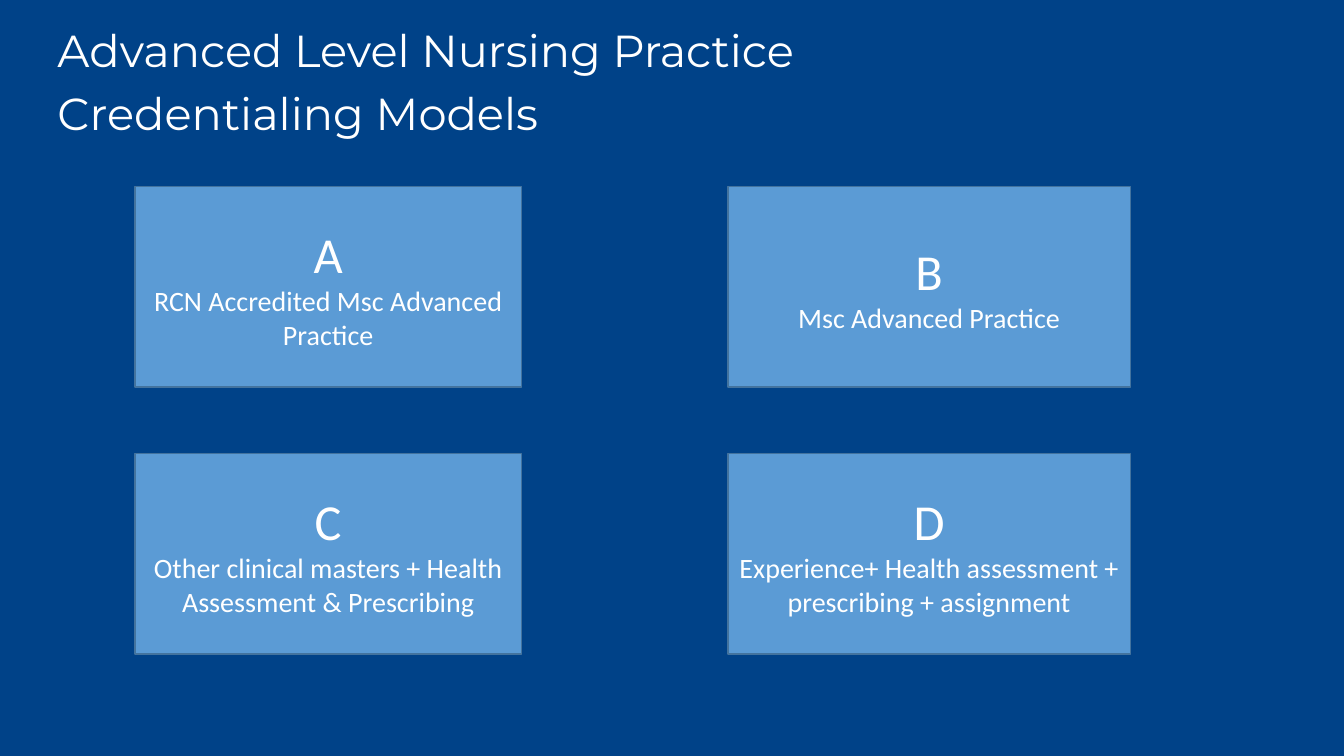
"""Build the slide on credentialing models for advanced level nursing practice."""
from dataclasses import dataclass

from pptx import Presentation
from pptx.dml.color import RGBColor
from pptx.enum.shapes import MSO_SHAPE as Shape
from pptx.enum.text import MSO_ANCHOR as Anchor, MSO_AUTO_SIZE as AutoSize, PP_ALIGN as Align
from pptx.slide import Slide
from pptx.text.text import TextFrame
from pptx.util import Inches, Pt


@dataclass(frozen=True)
class Theme:
    background: RGBColor = RGBColor(0x00, 0x42, 0x88)
    card_fill: RGBColor = RGBColor(0x5B, 0x9B, 0xD5)
    card_line: RGBColor = RGBColor(0x43, 0x73, 0x9E)
    text: RGBColor = RGBColor(0xFF, 0xFF, 0xFF)
    title_font: str = "Montserrat"
    card_font: str = "Calibri"
    title_size: int = 32
    letter_size: int = 36
    label_size: int = 20


@dataclass(frozen=True)
class Model:
    letter: str
    label: str


@dataclass(frozen=True)
class Column:
    left: float
    width: float


THEME = Theme()
TITLE_LINES = ["Advanced Level Nursing Practice", "Credentialing Models"]
MODELS = [
    Model("A", "RCN Accredited Msc Advanced Practice"),
    Model("B", "Msc Advanced Practice"),
    Model("C", "Other clinical masters + Health Assessment & Prescribing"),
    Model("D", "Experience+ Health assessment + prescribing + assignment"),
]
COLUMNS = [Column(1.34, 3.83), Column(7.22, 3.99)]
CARD_TOP, CARD_HEIGHT, ROW_PITCH = 1.85, 1.99, 2.65


def apply_format(target: object, values: dict[str, object]) -> None:
    for name, value in values.items():
        setattr(target, name, value)


def write_lines(frame: TextFrame, lines: list[str], sizes: list[int], font: str,
                paragraph_format: dict[str, object]) -> None:
    frame.text = "\n".join(lines)
    for para, size in zip(frame.paragraphs, sizes):
        apply_format(para, paragraph_format)
        span = para.runs[0]
        apply_format(span.font, {"name": font, "size": Pt(size)})
        span.font.color.rgb = THEME.text


def add_title(page: Slide) -> None:
    box = page.shapes.title
    apply_format(box, {"left": Inches(0.47), "top": Inches(0.24),
                       "width": Inches(10.04), "height": Inches(1.09)})
    frame = box.text_frame
    apply_format(frame, {"word_wrap": True, "auto_size": AutoSize.NONE,
                         "vertical_anchor": Anchor.TOP})
    write_lines(frame, TITLE_LINES, [THEME.title_size] * len(TITLE_LINES), THEME.title_font,
                {"alignment": Align.LEFT, "line_spacing": 0.9, "space_before": Pt(0)})
    for para in frame.paragraphs[1:]:
        para.space_before = Pt(10)


def add_card(page: Slide, model: Model, column: Column, top: float) -> None:
    box = page.shapes.add_shape(Shape.RECTANGLE, Inches(column.left), Inches(top),
                                Inches(column.width), Inches(CARD_HEIGHT))
    box.shadow.inherit = False
    box.fill.solid()
    box.fill.fore_color.rgb = THEME.card_fill
    box.line.color.rgb = THEME.card_line
    box.line.width = Pt(1)
    frame = box.text_frame
    apply_format(frame, {"word_wrap": True, "vertical_anchor": Anchor.MIDDLE})
    write_lines(frame, [model.letter, model.label], [THEME.letter_size, THEME.label_size],
                THEME.card_font, {"alignment": Align.CENTER})


def main() -> None:
    deck = Presentation()
    apply_format(deck, {"slide_width": Inches(13.33), "slide_height": Inches(7.5)})
    page = deck.slides.add_slide(deck.slide_layouts.get_by_name("Title Only"))
    page.background.fill.solid()
    page.background.fill.fore_color.rgb = THEME.background
    add_title(page)
    for index, model in enumerate(MODELS):
        row, column = divmod(index, len(COLUMNS))
        add_card(page, model, COLUMNS[column], CARD_TOP + row * ROW_PITCH)
    deck.save("out.pptx")


if __name__ == "__main__":
    main()
